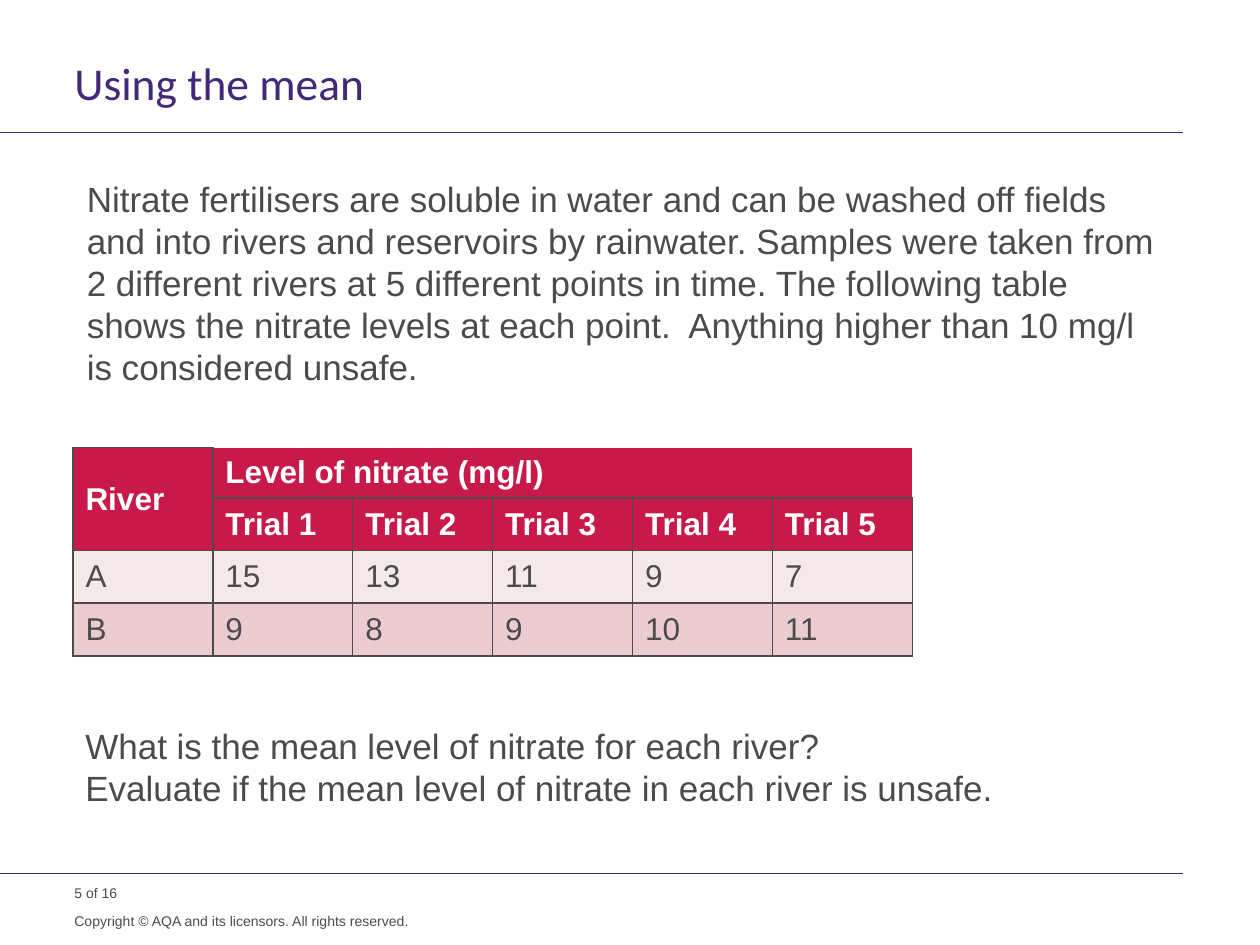
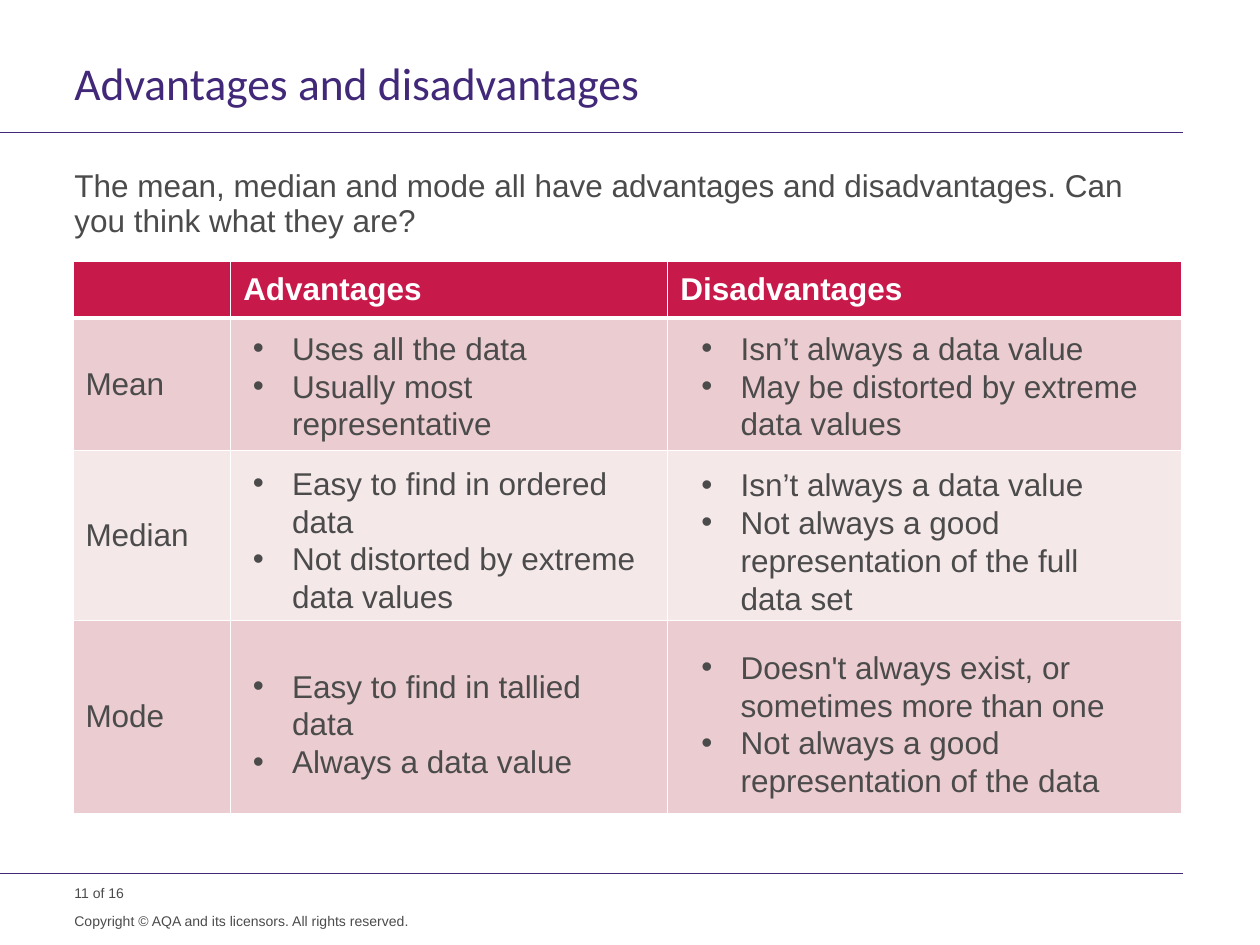
from lxml.etree import SubElement
from pptx import Presentation
from pptx.dml.color import RGBColor
from pptx.enum.shapes import MSO_CONNECTOR
from pptx.enum.text import MSO_ANCHOR
from pptx.oxml.ns import qn
from pptx.util import Cm, Pt

PURPLE = RGBColor(0x41, 0x28, 0x78)
GREY = RGBColor(0x4B, 0x4B, 0x4B)
WHITE = RGBColor(0xFF, 0xFF, 0xFF)
CRIMSON = RGBColor(0xC8, 0x19, 0x4B)
PALE_PINK = RGBColor(0xF5, 0xE8, 0xE9)
PINK = RGBColor(0xEB, 0xCC, 0xD0)

LEFT = 1.5
RULE_END = 23.85
TEXT_INSETS = (0.25, 0.13, 0.25, 0.13)
NO_INSETS = (0, 0, 0, 0)
PLACEHOLDER_INSETS = (0, 0, 0.25, 0)
BULLET_INDENT = Cm(0.79)


def add_bullet(paragraph):
    properties = paragraph._p.get_or_add_pPr()
    properties.set("marL", str(BULLET_INDENT))
    properties.set("indent", str(-BULLET_INDENT))
    SubElement(properties, qn("a:buFont"), typeface="Arial")
    SubElement(properties, qn("a:buChar"), char="•")


def write_text(text_frame, text, size=18, font="Arial", color=GREY, bold=False,
               line_spacing=None, bullets=False):
    for index, line in enumerate(text.split("\n")):
        paragraph = text_frame.add_paragraph() if index else text_frame.paragraphs[0]
        if bullets:
            add_bullet(paragraph)
        if line_spacing:
            paragraph.line_spacing = Pt(line_spacing)
        run = paragraph.add_run()
        run.text = line
        run.font.size = Pt(size)
        run.font.name = font
        run.font.bold = bold
        run.font.color.rgb = color


def add_text(slide, text, left, top, width, height, insets=TEXT_INSETS, wrap=True,
             **text_format):
    shape = slide.shapes.add_textbox(Cm(left), Cm(top), Cm(width), Cm(height))
    text_frame = shape.text_frame
    text_frame.word_wrap = wrap
    text_frame.vertical_anchor = MSO_ANCHOR.TOP
    (text_frame.margin_left, text_frame.margin_top,
     text_frame.margin_right, text_frame.margin_bottom) = map(Cm, insets)
    write_text(text_frame, text, **text_format)


def add_rule(slide, top):
    rule = slide.shapes.add_connector(
        MSO_CONNECTOR.STRAIGHT, 0, Cm(top), Cm(RULE_END), Cm(top))
    rule.line.color.rgb = PURPLE
    rule.line.width = Pt(0.6)
    SubElement(rule._element.spPr, qn("a:effectLst"))


def set_borders(cell, color, **changes):
    properties = cell._tc.get_or_add_tcPr()
    for side in "LRTB":
        side_color, width = changes.get(side, (color, 1))
        line = SubElement(properties, qn(f"a:ln{side}"), w=str(Pt(width)))
        fill = SubElement(line, qn("a:solidFill"))
        SubElement(fill, qn("a:srgbClr"), val=str(side_color))


def add_table(slide, top, rows, column_widths, row_heights, row_fills, border_color,
              border_changes):
    frame = slide.shapes.add_table(
        len(row_heights), len(column_widths), Cm(1.47), Cm(top),
        Cm(sum(column_widths)), Cm(sum(row_heights)))
    table = frame.table
    for column, width in zip(table.columns, column_widths):
        column.width = Cm(width)
    for row_index, (texts, height, fill) in enumerate(zip(rows, row_heights, row_fills)):
        table.rows[row_index].height = Cm(height)
        is_header = fill == CRIMSON
        for column_index, text in enumerate(texts):
            cell = table.cell(row_index, column_index)
            set_borders(cell, border_color, **border_changes(row_index, column_index))
            cell.fill.solid()
            cell.fill.fore_color.rgb = fill
            cell.vertical_anchor = MSO_ANCHOR.MIDDLE
            if text:
                write_text(cell.text_frame, text, bold=is_header,
                           color=WHITE if is_header else GREY)
    return table


def add_slide(presentation, title, number):
    slide = presentation.slides.add_slide(presentation.slide_layouts[6])
    add_rule(slide, 2.67)
    add_rule(slide, 17.6)
    add_text(slide, f"{number} of 16", LEFT, 17.83, 3.99, 0.33, insets=NO_INSETS, size=8)
    add_text(slide, "Copyright © AQA and its licensors. All rights reserved.",
             LEFT, 18.39, 7.44, 0.66, insets=NO_INSETS, size=8, line_spacing=10)
    add_text(slide, title, LEFT, 1.22, 22.35, 1.19, insets=PLACEHOLDER_INSETS,
             size=26, font="Calibri", color=PURPLE, line_spacing=28)
    return slide


def nitrate_borders(row, column):
    if row == 0 and column > 0:
        return {"T": (WHITE, 1), "R": (WHITE, 1)}
    return {}


def comparison_borders(row, column):
    return {0: {"B": (WHITE, 3)}, 1: {"T": (WHITE, 3)}}.get(row, {})


def build_mean_slide(presentation):
    slide = add_slide(presentation, "Using the mean", 5)
    add_text(slide, "Nitrate fertilisers are soluble in water and can be washed off fields "
             "and into rivers and reservoirs by rainwater. Samples were taken from "
             "2 different rivers at 5 different points in time. The following table "
             "shows the nitrate levels at each point.  Anything higher than 10 mg/l "
             "is considered unsafe.", LEFT, 3.45, 22.33, 4.52, size=20)
    rows = [
        ["River", "Level of nitrate (mg/l)", "", "", "", ""],
        ["", *(f"Trial {trial}" for trial in range(1, 6))],
        ["A", "15", "13", "11", "9", "7"],
        ["B", "9", "8", "9", "10", "11"],
    ]
    table = add_table(slide, 9.02, rows, [2.82] * 6, [1.02, 1.06, 1.06, 1.06],
                      [CRIMSON, CRIMSON, PALE_PINK, PINK], GREY, nitrate_borders)
    table.cell(0, 0).merge(table.cell(1, 0))
    table.cell(0, 1).merge(table.cell(0, 5))
    add_text(slide, "What is the mean level of nitrate for each river?\n"
             "Evaluate if the mean level of nitrate in each river is unsafe.",
             1.47, 14.48, 18.95, 1.96, wrap=False, size=20)


def build_comparison_slide(presentation):
    slide = add_slide(presentation, "Advantages and disadvantages", 11)
    add_text(slide, "The mean, median and mode all have advantages and disadvantages. "
             "Can you think what they are?", LEFT, 3.4, 22.35, 1.85,
             insets=PLACEHOLDER_INSETS, line_spacing=20)
    rows = [["", "Advantages", "Disadvantages"]]
    rows += [[average, "", ""] for average in ("Mean", "Median", "Mode")]
    add_table(slide, 5.27, rows, [3.18, 8.81, 10.36], [1.14, 2.67, 3.43, 3.89],
              [CRIMSON, PINK, PALE_PINK, PINK], WHITE, comparison_borders)
    advantages_left, disadvantages_left = 4.85, 13.89
    points = [
        (advantages_left, 6.5, 8.41, 3.33,
         "Uses all the data\nUsually most representative"),
        (disadvantages_left, 6.5, 9.58, 3.33,
         "Isn’t always a data value\nMay be distorted by extreme data values"),
        (advantages_left, 9.22, 8.41, 4.22,
         "Easy to find in ordered data\nNot distorted by extreme data values"),
        (disadvantages_left, 9.25, 9.17, 4.11,
         "Isn’t always a data value\nNot always a good representation of the full data set"),
        (advantages_left, 13.31, 8.05, 2.57,
         "Easy to find in tallied data\nAlways a data value"),
        (disadvantages_left, 12.93, 9.58, 3.33,
         "Doesn't always exist, or sometimes more than one\n"
         "Not always a good representation of the data"),
    ]
    for left, top, width, height, text in points:
        add_text(slide, text, left, top, width, height, bullets=True)


def main():
    presentation = Presentation()
    presentation.slide_width = Cm(25.4)
    presentation.slide_height = Cm(19.05)
    build_mean_slide(presentation)
    build_comparison_slide(presentation)
    presentation.save("out.pptx")


if __name__ == "__main__":
    main()
